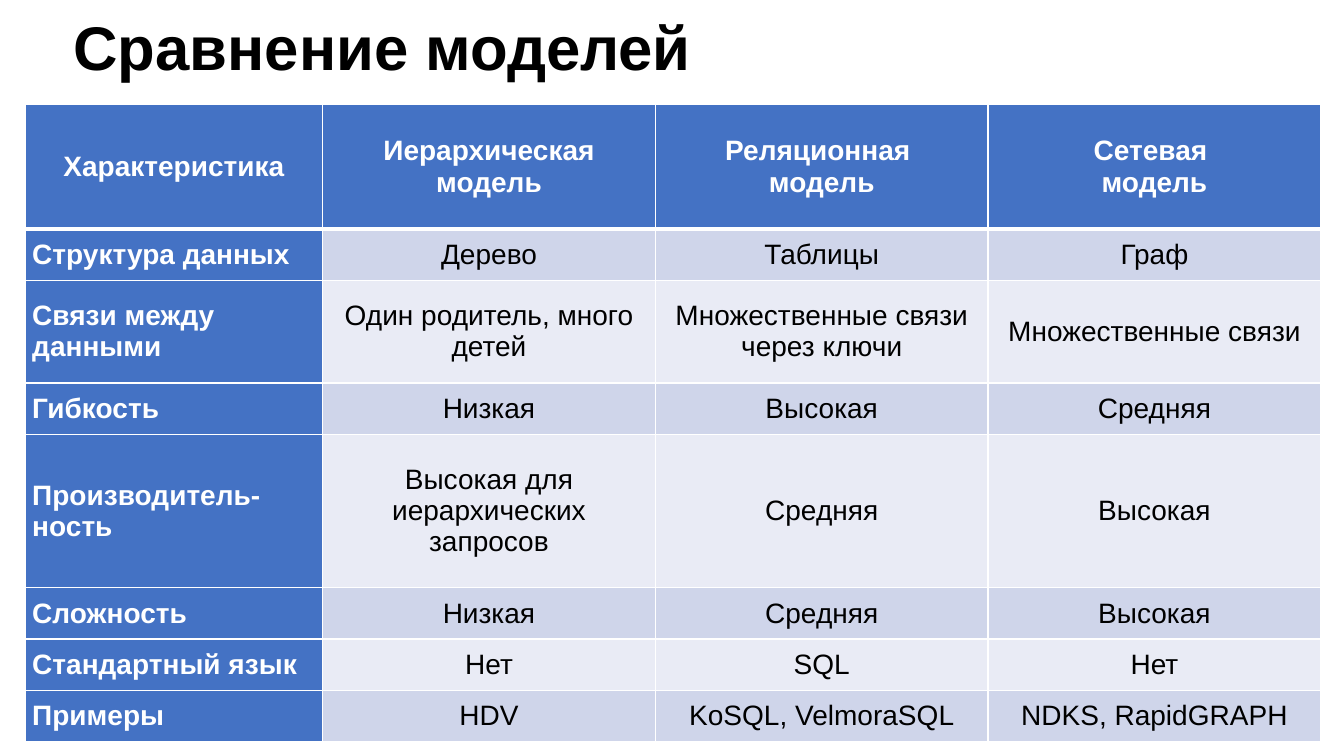
"""Build a slide with a table that compares three data models."""
import pptx
import pptx.dml.color
import pptx.enum.text
import pptx.oxml
import pptx.oxml.ns
import pptx.util

Inches = pptx.util.Inches
Pt = pptx.util.Pt
ALIGN = pptx.enum.text.PP_ALIGN
MIDDLE = pptx.enum.text.MSO_ANCHOR.MIDDLE


def color(code):
    return pptx.dml.color.RGBColor.from_string(code)


def style(frame, size, code, bold, align):
    for para in frame.paragraphs:
        para.alignment = align
        for run in para.runs:
            run.font.name = "Arial"
            run.font.size = Pt(size)
            run.font.bold = bold
            run.font.color.rgb = color(code)


deck = pptx.Presentation()
deck.slide_width = Inches(13.33)
deck.slide_height = Inches(7.5)
slide = deck.slides.add_slide(deck.slide_layouts[6])

title = slide.shapes.add_textbox(Inches(0.63), Inches(0.06), Inches(11.5), Inches(0.88))
frame = title.text_frame
frame.word_wrap = True
frame.vertical_anchor = MIDDLE
frame.text = "Сравнение моделей"
frame.paragraphs[0].line_spacing = 0.9
style(frame, 44, "000000", True, ALIGN.LEFT)

rows = [
    ["Характеристика", "Иерархическая модель", "Реляционная \nмодель", "Сетевая \nмодель"],
    ["Структура данных", "Дерево", "Таблицы", "Граф"],
    ["Связи между данными", "Один родитель, много детей",
     "Множественные связи через ключи", "Множественные связи"],
    ["Гибкость", "Низкая", "Высокая", "Средняя"],
    ["Производитель-ность", "Высокая для иерархических запросов", "Средняя", "Высокая"],
    ["Сложность", "Низкая", "Средняя", "Высокая"],
    ["Стандартный язык", "Нет", "SQL", "Нет"],
    ["Примеры", "HDV", "KoSQL, VelmoraSQL", "NDKS, RapidGRAPH"],
]
widths = [2.95, 3.3, 3.3, 3.3]
heights = [1.23, 0.51, 1.02, 0.51, 1.52, 0.51, 0.51, 0.51]

table = slide.shapes.add_table(
    len(rows), len(widths), Inches(0.25), Inches(1.04), Inches(12.84), Inches(6.31)).table
for col, width in zip(table.columns, widths):
    col.width = Inches(width)
for row, height in zip(table.rows, heights):
    row.height = Inches(height)

for r, texts in enumerate(rows):
    for c, text in enumerate(texts):
        cell = table.cell(r, c)
        cell.margin_left = cell.margin_right = Inches(0.07)
        cell.margin_top = cell.margin_bottom = 0
        cell.vertical_anchor = MIDDLE

        props = cell._tc.get_or_add_tcPr()
        for side in "LRTB":
            thick = (r, side) in [(0, "B"), (1, "T")]
            props.append(pptx.oxml.parse_xml(
                f'<a:ln{side} {pptx.oxml.ns.nsdecls("a")} w="{Pt(3 if thick else 1)}">'
                '<a:solidFill><a:srgbClr val="FFFFFF"/></a:solidFill>'
                f'</a:ln{side}>'))

        head = r == 0 or c == 0
        band = "CFD5EA" if r % 2 else "E9EBF5"
        cell.fill.solid()
        cell.fill.fore_color.rgb = color("4472C4" if head else band)
        cell.text_frame.text = text
        align = ALIGN.LEFT if c == 0 and r > 0 else ALIGN.CENTER
        style(cell.text_frame, 20, "FFFFFF" if head else "000000", head, align)

deck.save("out.pptx")
